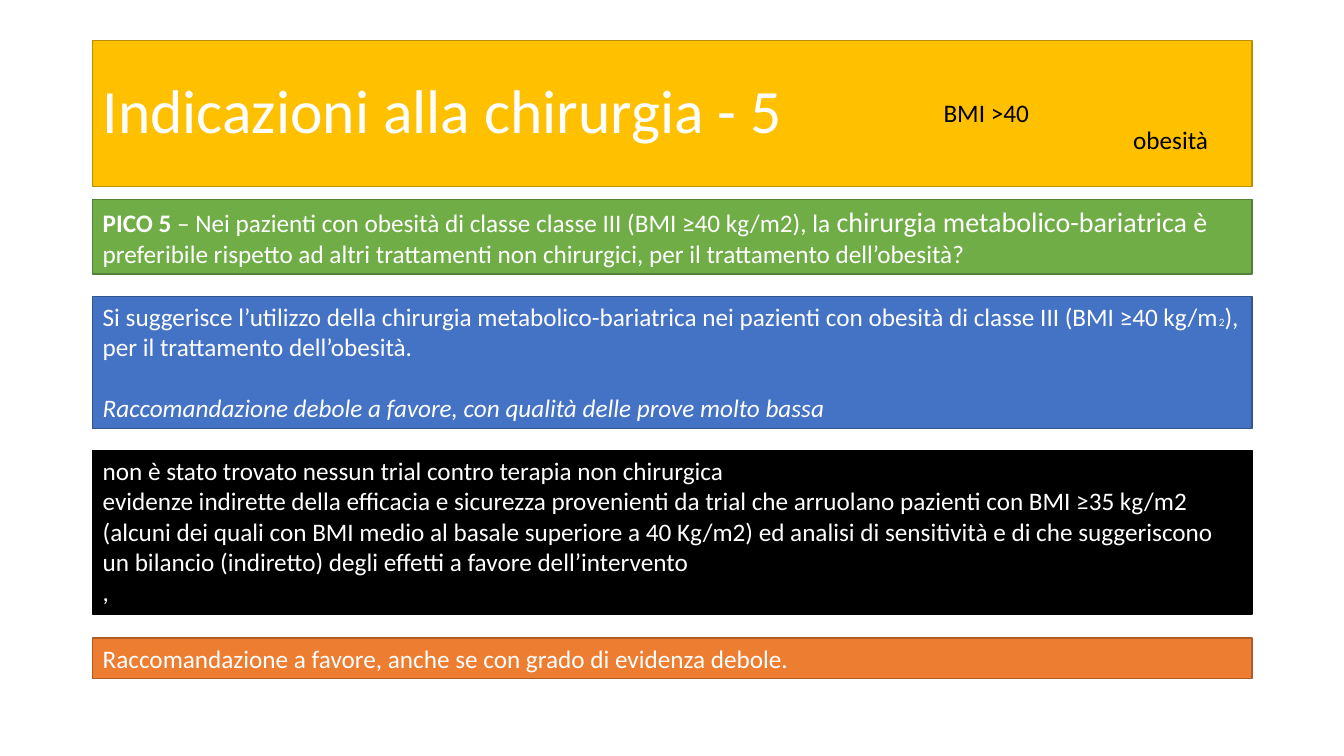
from pptx import Presentation
from pptx.dml.color import RGBColor
from pptx.enum.shapes import MSO_SHAPE as Shape
from pptx.enum.text import MSO_ANCHOR as Anchor, PP_ALIGN as Align
from pptx.util import Inches, Pt

# Content: each paragraph is a list of (text, size, style) runs
TITLE = [[("Indicazioni alla chirurgia - 5", 44, "")]]
QUESTION = [[
    ("PICO 5 ", 18, "bold"),
    ("– Nei pazienti con obesità di classe classe III (BMI ≥40 kg/m2), la ", 18, ""),
    ("chirurgia metabolico-bariatrica è ", 20, ""),
    ("preferibile rispetto ad altri trattamenti non chirurgici, "
     "per il trattamento dell’obesità?", 18, ""),
]]
RECOMMENDATION = [
    [("Si suggerisce l’utilizzo della chirurgia metabolico-bariatrica nei pazienti "
      "con obesità di classe III (BMI ≥40 kg/m", 18, ""),
     ("2", 8, ""),
     ("), per il trattamento dell’obesità.", 18, "")],
    [("Raccomandazione debole a favore, con qualità delle prove molto bassa", 18, "italic")],
]
EVIDENCE = [
    [("non è stato trovato nessun trial contro terapia non chirurgica", 18, "")],
    [("evidenze indirette della efficacia e sicurezza provenienti da trial che arruolano "
      "pazienti con BMI ≥35 kg/m2 (alcuni dei quali con BMI medio al basale superiore a "
      "40 Kg/m2) ed analisi di sensitività e di che suggeriscono un bilancio (indiretto) "
      "degli effetti a favore dell’intervento", 18, "")],
    [(",", 18, "")],
]
CONCLUSION = [[("Raccomandazione a favore, anche se con grado di evidenza debole.", 18, "")]]

# Bands: paragraphs, top, height, fill, outline, space between paragraphs in points
BANDS = [
    (TITLE, 0.4, 1.45, "FFC000", "BD8E00", 0),
    (QUESTION, 1.98, 0.74, "70AD47", "538035", 0),
    (RECOMMENDATION, 2.94, 1.31, "4472C4", "325491", 22),
    (EVIDENCE, 4.47, 1.62, "000000", "000000", 0),
    (CONCLUSION, 6.33, 0.4, "ED7D31", "AF5C24", 0),
]
BAND_LEFT, BAND_WIDTH = 0.92, 11.5

# Labels: text, left, top, width, height
LABELS = [
    ("BMI >40", 9.26, 0.92, 2.69, 0.4),
    ("obesità", 11.14, 1.18, 1.02, 0.4),
]


def color(value):
    return RGBColor.from_string(value)


def write(shape, paragraphs, text_color, gap=0):
    frame = shape.text_frame
    frame.word_wrap = True
    for index, runs in enumerate(paragraphs):
        paragraph = frame.add_paragraph() if index else frame.paragraphs[0]
        paragraph.alignment = Align.LEFT
        if index and gap:
            paragraph.space_before = Pt(gap)
        for text, size, style in runs:
            run = paragraph.add_run()
            run.text = text
            run.font.name = "Calibri"
            run.font.size = Pt(size)
            run.font.bold = style == "bold"
            run.font.italic = style == "italic"
            run.font.color.rgb = color(text_color)


presentation = Presentation()
presentation.slide_width = Inches(13.33)
presentation.slide_height = Inches(7.5)
slide = presentation.slides.add_slide(presentation.slide_layouts[6])

# Coloured bands
for paragraphs, top, height, fill, outline, gap in BANDS:
    band = slide.shapes.add_shape(Shape.RECTANGLE, Inches(BAND_LEFT), Inches(top),
                                  Inches(BAND_WIDTH), Inches(height))
    band.shadow.inherit = False
    band.fill.solid()
    band.fill.fore_color.rgb = color(fill)
    band.line.color.rgb = color(outline)
    band.line.width = Pt(1)
    write(band, paragraphs, "FFFFFF", gap)
    band.text_frame.vertical_anchor = Anchor.TOP
    if paragraphs is TITLE:
        band.text_frame.vertical_anchor = Anchor.MIDDLE
        band.text_frame.paragraphs[0].line_spacing = 0.9

# Labels over the title band
for text, *box in LABELS:
    label = slide.shapes.add_textbox(*map(Inches, box))
    write(label, [[(text, 18, "")]], "000000")

presentation.save("out.pptx")
